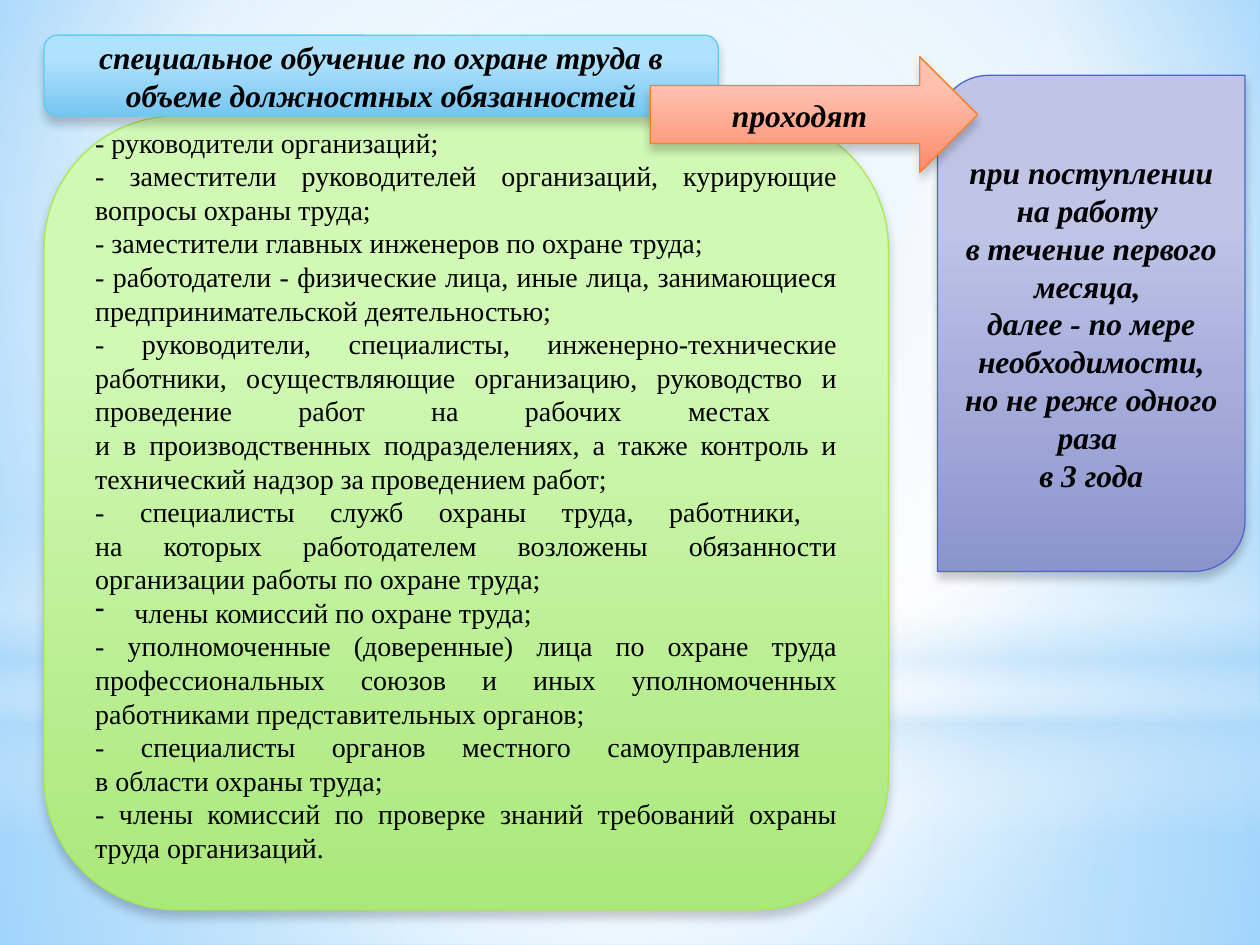
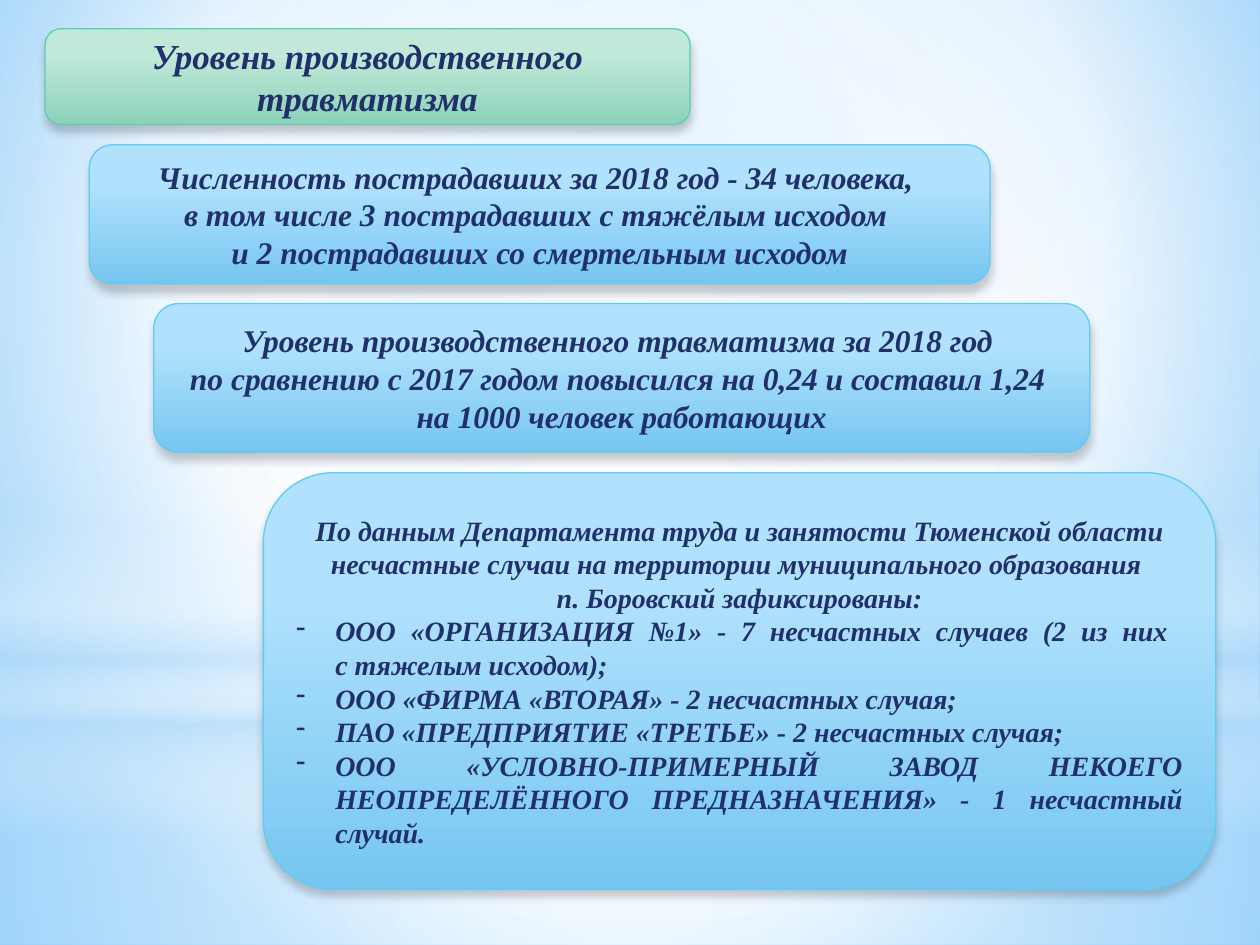
from lxml import etree
from pptx import Presentation
from pptx.dml.color import RGBColor
from pptx.enum.shapes import MSO_SHAPE
from pptx.enum.text import MSO_ANCHOR, PP_ALIGN
from pptx.oxml.ns import qn
from pptx.util import Cm, Pt

RECT, OVAL = MSO_SHAPE.RECTANGLE, MSO_SHAPE.OVAL
ROUND, DIAG = MSO_SHAPE.ROUNDED_RECTANGLE, MSO_SHAPE.ROUND_2_DIAG_RECTANGLE
ARROW = MSO_SHAPE.RIGHT_ARROW
MIDDLE = MSO_ANCHOR.MIDDLE
CENTER, JUST = PP_ALIGN.CENTER, PP_ALIGN.JUSTIFY

# Colours
BLACK, NAVY = RGBColor(0, 0, 0), RGBColor(0x21, 0x30, 0x6A)
WHITE, PALE = RGBColor(0xFF, 0xFF, 0xFF), RGBColor(0xB4, 0xDC, 0xFA)
SKY, AZURE = RGBColor(0x9E, 0xD5, 0xFF), RGBColor(0x5B, 0xB9, 0xFF)

# Box themes: top of the gradient, bottom of it, outline
GREEN = RGBColor(0xD1, 0xF8, 0xB5), RGBColor(0xAA, 0xE8, 0x7B), RGBColor(0xA7, 0xEA, 0x52)
BLUE = RGBColor(0xB1, 0xE2, 0xFD), RGBColor(0x76, 0xC6, 0xF1), RGBColor(0x5E, 0xCC, 0xF3)
LILAC = RGBColor(0xC0, 0xC5, 0xE8), RGBColor(0x8C, 0x94, 0xCE), RGBColor(0x4E, 0x67, 0xC8)
CORAL = RGBColor(0xFF, 0xC0, 0xAF), RGBColor(0xFF, 0x89, 0x68), RGBColor(0xFF, 0x80, 0x21)
MINT = RGBColor(0xC0, 0xE9, 0xDA), RGBColor(0x8C, 0xD1, 0xB8), RGBColor(0x5D, 0xCE, 0xAF)

FONT = "Times New Roman"
MID = (50, 50, 50, 50)
INDENT = Cm(0.79)

STAFF = [
    "- руководители организаций;",
    "- заместители руководителей организаций, курирующие вопросы охраны труда; ",
    "- заместители главных инженеров по охране труда; ",
    "- работодатели - физические лица, иные лица, занимающиеся "
    "предпринимательской деятельностью;",
    "- руководители, специалисты, инженерно-технические работники, "
    "осуществляющие организацию, руководство и проведение работ на рабочих местах "
    "\vи в производственных подразделениях, а также контроль и технический надзор "
    "за проведением работ; ",
    "- специалисты служб охраны труда, работники, \vна которых работодателем "
    "возложены обязанности организации работы по охране труда; ",
    "члены комиссий по охране труда;",
    "- уполномоченные (доверенные) лица по охране труда профессиональных союзов "
    "и иных уполномоченных работниками представительных органов;",
    "- специалисты органов местного самоуправления \vв области охраны труда; ",
    "- члены комиссий по проверке знаний требований охраны труда организаций. ",
]
TERMS = [
    "при поступлении на работу ",
    "в течение первого месяца, ",
    "далее - по мере необходимости, но не реже одного раза ",
    "в 3 года",
]
TOLL = [
    "Численность пострадавших за 2018 год - 34 человека, ",
    "в том числе 3 пострадавших с тяжёлым исходом ",
    "и 2 пострадавших со смертельным исходом",
]
LEVEL = [
    "Уровень производственного травматизма за 2018 год ",
    "по сравнению с 2017 годом повысился на 0,24 и составил 1,24 ",
    "на 1000 человек работающих",
]
CASES = [
    "По данным Департамента труда и занятости Тюменской области "
    "несчастные случаи на территории муниципального образования ",
    "п. Боровский зафиксированы:",
    "ООО «ОРГАНИЗАЦИЯ №1» - 7 несчастных случаев (2 из них \vс тяжелым исходом);",
    "ООО «ФИРМА «ВТОРАЯ» - 2 несчастных случая;",
    "ПАО «ПРЕДПРИЯТИЕ «ТРЕТЬЕ» - 2 несчастных случая;",
    "ООО «УСЛОВНО-ПРИМЕРНЫЙ ЗАВОД НЕКОЕГО "
    "НЕОПРЕДЕЛЁННОГО ПРЕДНАЗНАЧЕНИЯ» - 1 несчастный случай. ",
]


def node(up, tag, **attrs):
    """Add a child element with the given attributes."""
    kid = etree.SubElement(up, qn(tag))
    for key, val in attrs.items():
        kid.set(key, str(val))
    return kid


def blend(host, stops, focus=None):
    """Swap the solid fill of host for a gradient of (place, colour, alpha)."""
    old = host.find(qn("a:solidFill"))
    grad = etree.Element(qn("a:gradFill"), rotWithShape="1")
    row = node(grad, "a:gsLst")
    for place, tone, alpha in stops:
        stop = node(row, "a:gs", pos=place * 1000)
        clr = node(stop, "a:srgbClr", val=tone)
        if alpha < 100:
            node(clr, "a:alpha", val=alpha * 1000)
    if focus:
        way = node(grad, "a:path", path="circle")
        sides = {side: part * 1000 for side, part in zip("ltrb", focus)}
        node(way, "a:fillToRect", **sides)
    else:
        node(grad, "a:lin", ang=5400000, scaled=0)
    host.replace(old, grad)


def shade(shape):
    """Give the shape a soft shadow straight below it."""
    shape.shadow.inherit = False
    drop = node(shape.element.spPr.find(qn("a:effectLst")), "a:outerShdw",
                blurRad=Pt(5), dist=Pt(4), dir=5400000, rotWithShape=0)
    node(node(drop, "a:srgbClr", val=BLACK), "a:alpha", val=20000)


def block(slide, kind, area, stops, focus=None):
    """Add a preset shape with a gradient fill; area is in centimetres."""
    shape = slide.shapes.add_shape(kind, *map(Cm, area))
    shape.fill.solid()
    blend(shape.element.spPr, stops, focus)
    return shape


def box(slide, kind, area, theme, lines, size=18, tone=BLACK, strong=True, align=CENTER):
    """Add a shaded box with text and return its text frame."""
    top, base, edge = theme
    shape = block(slide, kind, area, [(28, top, 100), (100, base, 100)])
    shape.line.color.rgb = edge
    shape.line.width = Pt(0.75)
    shade(shape)
    frame = shape.text_frame
    frame.word_wrap = True
    frame.vertical_anchor = MIDDLE
    frame.text = "\n".join(lines)
    for par in frame.paragraphs:
        par.alignment = align
        for run in par.runs:
            font = run.font
            font.name, font.size = FONT, Pt(size)
            font.bold = font.italic = strong
            font.color.rgb = tone
    return frame


def dash(pars):
    """Turn paragraphs into justified items with a hanging dash."""
    for par in pars:
        par.alignment = JUST
        props = par._p.get_or_add_pPr()
        props.set("marL", str(INDENT))
        props.set("indent", str(-INDENT))
        node(props, "a:buFontTx")
        node(props, "a:buChar", char="-")


def scene(master, slide):
    """Set the master's background and move its glow layers onto it."""
    master.background.fill.solid()
    blend(master.element.find(".//" + qn("p:bgPr")),
          [(0, SKY, 100), (60, WHITE, 100), (100, AZURE, 100)], (20, 10, 20, 60))
    layers = [
        (RECT, (0, 14.17, 25.4, 4.88),
         [(0, WHITE, 91), (37, WHITE, 76), (100, PALE, 79)], MID),
        (RECT, (0, 0, 25.4, 14.17),
         [(0, WHITE, 89), (48, WHITE, 62), (100, PALE, 79)], MID),
        (RECT, (0, 10.46, 25.4, 6.35),
         [(0, WHITE, 0), (29, WHITE, 30), (45, PALE, 40), (55, WHITE, 26),
          (65, PALE, 60), (100, WHITE, 0)], None),
        (OVAL, (0, 4.45, 25.4, 14.17), [(0, WHITE, 100), (56, WHITE, 0)], MID),
    ]
    for layer in layers:
        shape = block(slide, *layer)
        shape.line.fill.background()
        shape.shadow.inherit = False
        master.shapes.element.append(shape.element)


def train(slide):
    """Who takes the special training, and when."""
    staff = box(slide, ROUND, (0.89, 2.34, 17.02, 16), GREEN, STAFF,
                size=16, strong=False, align=JUST)
    staff.margin_bottom = Cm(0.86)
    dash(staff.paragraphs[6:7])
    box(slide, ROUND, (0.89, 0.71, 13.59, 1.63), BLUE,
        ["специальное обучение по охране труда в объеме должностных обязанностей"])
    box(slide, DIAG, (18.9, 1.52, 6.2, 10), LILAC, TERMS)
    box(slide, ARROW, (13.11, 1.14, 6.6, 2.34), CORAL, ["проходят"])


def harm(slide):
    """Injury figures as a staircase of boxes."""
    box(slide, ROUND, (0.91, 0.58, 13, 1.93), MINT,
        ["Уровень производственного травматизма"], size=20, tone=NAVY)
    box(slide, ROUND, (1.8, 2.92, 18.16, 2.8), BLUE, TOLL, tone=NAVY)
    box(slide, ROUND, (3.1, 6.12, 18.87, 3), BLUE, LEVEL, tone=NAVY)
    cases = box(slide, ROUND, (5.31, 9.53, 19.2, 8.4), BLUE, CASES, size=16, tone=NAVY)
    dash(cases.paragraphs[2:])


def main():
    deck = Presentation()
    deck.slide_width, deck.slide_height = Cm(25.4), Cm(19.05)
    blank = deck.slide_layouts[6]
    first, second = [deck.slides.add_slide(blank) for _ in range(2)]
    scene(deck.slide_master, first)
    train(first)
    harm(second)
    deck.save("out.pptx")


if __name__ == "__main__":
    main()
